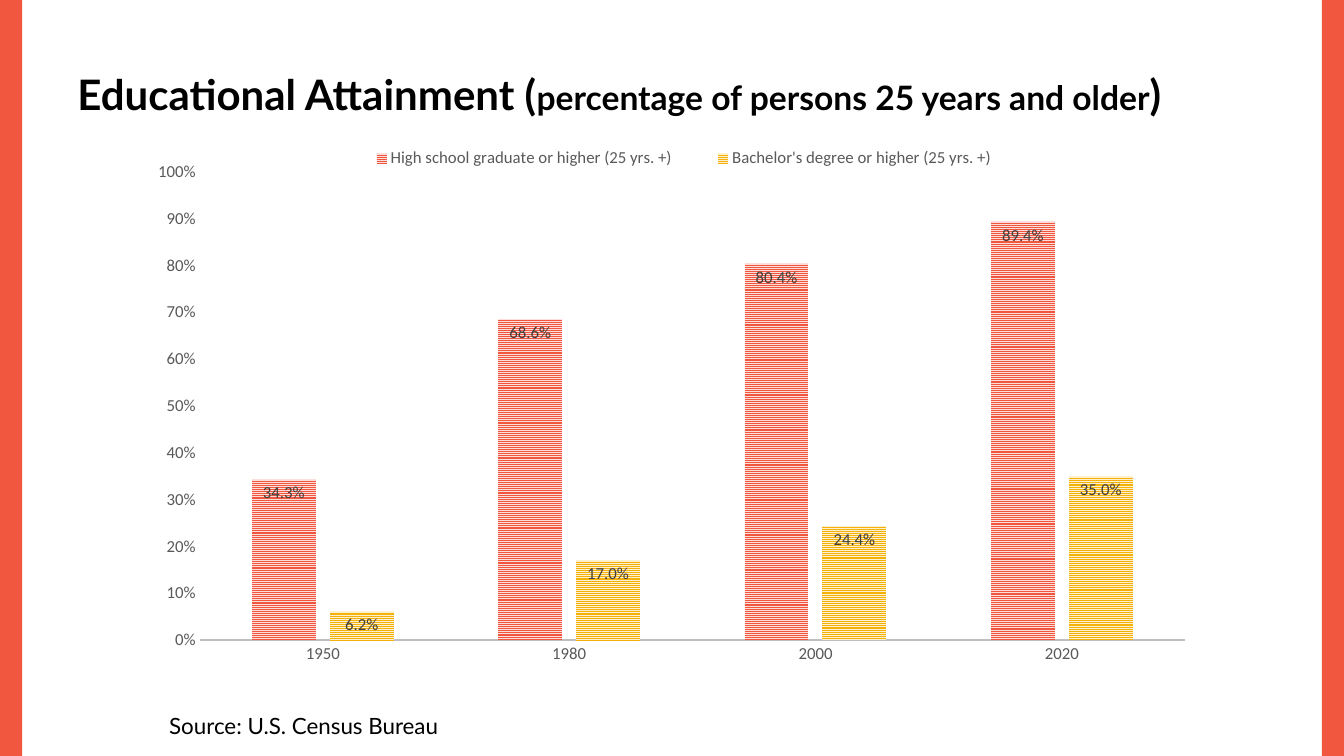
from lxml import etree
from pptx import Presentation
from pptx import util as u
from pptx.chart.data import CategoryChartData
from pptx.dml.color import RGBColor
from pptx.enum import chart as ch, dml, shapes, text
from pptx.oxml import ns

CORAL, PALE_CORAL = "F1563F", "FCDDD9"
GOLD, PALE_GOLD = "F3B10A", "FDF0CE"
BLACK, GREY, DARK_GREY, AXIS_GREY = "000000", "595959", "404040", "BFBFBF"


def color(value):
    return RGBColor.from_string(value)


def style_font(font, size, hue, name, bold=False):
    font.size, font.name, font.bold = u.Pt(size), name, bold
    font.color.rgb = color(hue)


def write(paragraph, words, *, size, hue=BLACK, name="Lato", bold=False):
    run = paragraph.add_run()
    run.text = words
    style_font(run.font, size, hue, name, bold)


def place(parent, position, box, inner=False):
    """Set a manual layout, as fractions of the chart, on a chart part."""
    previous = parent.find(ns.qn("c:layout"))
    if previous is not None:
        parent.remove(previous)
    layout = etree.Element(ns.qn("c:layout"))
    parent.insert(position, layout)
    manual = etree.SubElement(layout, ns.qn("c:manualLayout"))
    settings = [("layoutTarget", "inner")] if inner else []
    settings += [("xMode", "edge"), ("yMode", "edge"), *zip("xywh", box)]
    for tag, value in settings:
        etree.SubElement(manual, ns.qn(f"c:{tag}")).set("val", str(value))


class AttainmentSlide:
    """Holds the slide and its style, with one method per kind of element."""

    def __init__(self, deck):
        self.slide = deck.slides.add_slide(deck.slide_layouts[6])
        self.chart_font = "Calibri"

    def band(self, left):
        band = self.slide.shapes.add_shape(
            shapes.MSO_SHAPE.RECTANGLE, u.Inches(left), 0, u.Inches(0.22), u.Inches(7.5))
        band.shadow.inherit = False
        band.fill.solid()
        band.fill.fore_color.rgb = color(CORAL)
        band.line.fill.background()

    def text(self, box, runs, anchor=text.MSO_ANCHOR.TOP, **style):
        frame = self.slide.shapes.add_textbox(*map(u.Inches, box)).text_frame
        frame.word_wrap = True
        frame.vertical_anchor = anchor
        for words, size in runs:
            write(frame.paragraphs[0], words, size=size, **style)

    def axis(self, axis):
        axis.major_tick_mark = axis.minor_tick_mark = ch.XL_TICK_MARK.NONE
        axis.has_major_gridlines = False
        style_font(axis.tick_labels.font, 12, GREY, self.chart_font)

    def series(self, series, hue, pale):
        fill = series.format.fill
        fill.patterned()
        fill.pattern = dml.MSO_PATTERN.NARROW_HORIZONTAL
        fill.fore_color.rgb, fill.back_color.rgb = color(hue), color(pale)
        series.invert_if_negative = False
        labels = series.data_labels
        labels.show_value = True
        labels.number_format, labels.number_format_is_linked = "0.0%", False
        labels.position = ch.XL_LABEL_POSITION.INSIDE_END
        style_font(labels.font, 12, DARK_GREY, self.chart_font)

    def columns(self, box, years, attainment):
        data = CategoryChartData(number_format="0.0%")
        data.categories = years
        for name, shares, *_ in attainment:
            data.add_series(name, shares)
        chart = self.slide.shapes.add_chart(
            ch.XL_CHART_TYPE.COLUMN_CLUSTERED, *map(u.Inches, box), data).chart
        chart.has_title = False
        style_font(chart.font, 10, BLACK, self.chart_font)

        plot = chart.plots[0]
        plot.gap_width, plot.overlap, plot.vary_by_categories = 164, -22, False
        for series, (*_, hue, pale) in zip(plot.series, attainment):
            self.series(series, hue, pale)

        years_axis, share_axis = chart.category_axis, chart.value_axis
        self.axis(years_axis)
        self.axis(share_axis)
        years_axis.format.line.color.rgb = color(AXIS_GREY)
        years_axis.format.line.width = u.Pt(1.5)
        share_axis.format.line.fill.background()
        share_axis.minimum_scale, share_axis.maximum_scale = 0, 1
        share_axis.major_unit = 0.1
        share_axis.tick_labels.number_format = "0%"
        share_axis.tick_labels.number_format_is_linked = False

        chart.has_legend = True
        legend = chart.legend
        legend.position = ch.XL_LEGEND_POSITION.TOP
        legend.include_in_layout = False
        style_font(legend.font, 12, GREY, self.chart_font)
        place(legend._element, 1, (0.22, 0.05, 0.58, 0.06))
        place(plot._element.getparent(), 0, (0.106, 0.102, 0.822, 0.759), inner=True)


def main():
    deck = Presentation()
    deck.slide_width, deck.slide_height = u.Inches(13.33), u.Inches(7.5)
    page = AttainmentSlide(deck)
    for left in (0, 13.11):
        page.band(left)
    page.text(
        (0.67, 0.3, 12, 1.25),
        [("Educational Attainment (", 30),
         ("percentage of persons 25 years and older", 24),
         (")", 30)],
        anchor=text.MSO_ANCHOR.MIDDLE, bold=True)
    page.columns(
        (0.72, 1.08, 11.89, 6.12),
        ["1950", "1980", "2000", "2020"],
        [("High school graduate or higher (25 yrs. +)",
          (0.343, 0.686, 0.804, 0.894), CORAL, PALE_CORAL),
         ("Bachelor's degree or higher (25 yrs. +)",
          (0.062, 0.17, 0.244, 0.35), GOLD, PALE_GOLD)])
    page.text((1.58, 7.02, 4.17, 0.37), [("Source: U.S. Census Bureau", 16)])
    deck.save("out.pptx")


if __name__ == "__main__":
    main()
